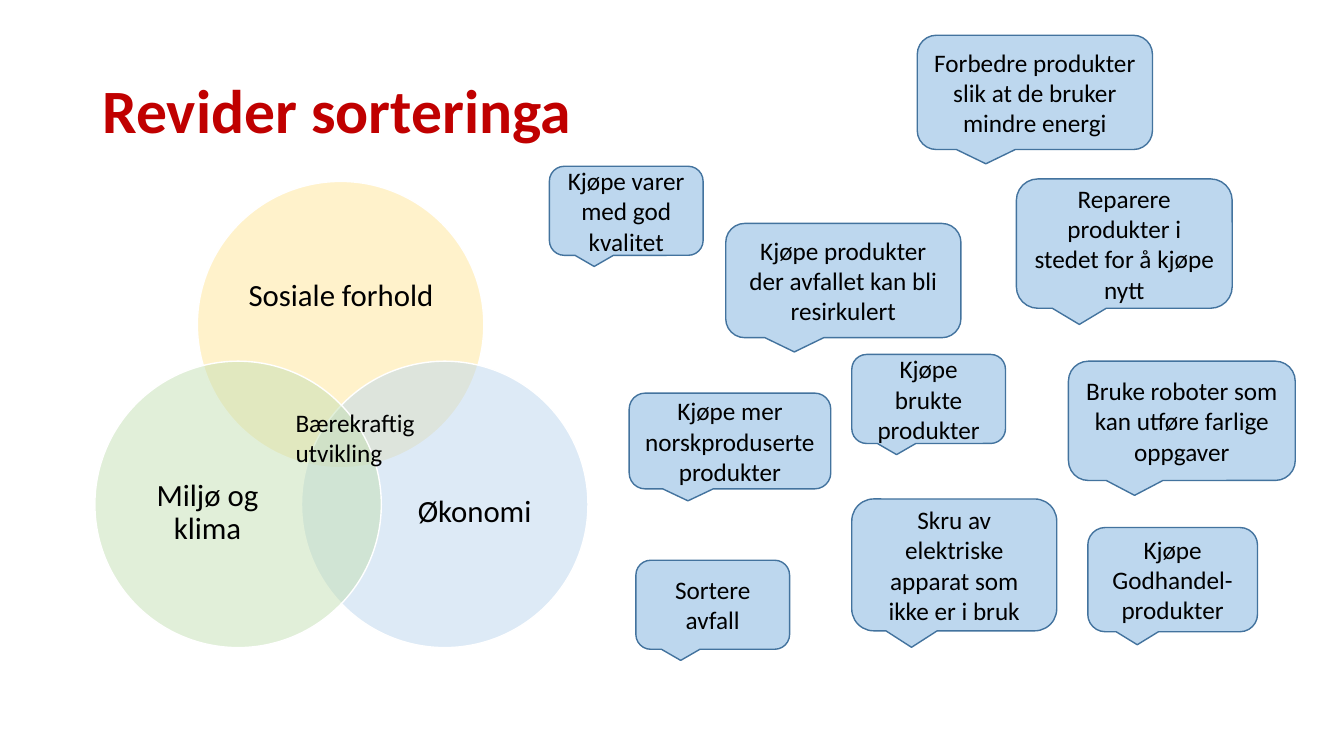
from lxml import etree
from pptx import Presentation
from pptx import util as u
from pptx.dml.color import RGBColor
from pptx.enum import shapes, text
from pptx.oxml.ns import qn

COLORS = {
    "title": "C00000", "ink": "000000", "white": "FFFFFF",
    "social": "FFE699", "economy": "BDD7EE", "climate": "C5E0B4",
    "bubble": "BDD7EE", "bubble_line": "43739E",
}
COLUMNS, ROWS = 160, 90
CIRCLE = 34.1
SMALL = (18.3, 10.6)
WIDE = (28, 13.6)

# circle position, colour, label, label box
VENN = [
    ((23.5, 21.6), "social", "Sosiale forhold", (28.1, 27.6, 25, 15.4)),
    ((35.9, 43), "economy", "Økonomi", (46.3, 51.7, 20.4, 18.7)),
    ((11.3, 43), "climate", "Miljø og klima", (14.5, 51.7, 20.4, 18.7)),
]
MEASURES = [
    ("Kjøpe varer med god kvalitet", (65.4, 19.8), SMALL),
    ("Kjøpe produkter der avfallet kan bli resirkulert", (86.4, 26.6), WIDE),
    ("Forbedre produkter slik at de bruker mindre energi", (109.2, 4.2), WIDE),
    ("Reparere produkter i stedet for å kjøpe nytt", (121, 21.3), (25.7, 15.4)),
    ("Kjøpe mer norskproduserte produkter", (74.9, 46.8), (24, 11.4)),
    ("Kjøpe brukte produkter", (101.4, 42.2), SMALL),
    ("Bruke roboter som kan utføre farlige oppgaver", (127.2, 43), (27, 14.2)),
    ("Sortere avfall", (75.7, 66.7), SMALL),
    ("Skru av elektriske apparat som ikke er i bruk", (101.4, 59.4), (24.4, 15.7)),
    ("Kjøpe Godhandel-produkter", (129.5, 62.8), (20.2, 12.4)),
]


class Deck:
    font = "Calibri"

    def __init__(self):
        self.prs = Presentation()
        self.prs.slide_width, self.prs.slide_height = u.Inches(13.33), u.Inches(7.5)
        self.s = self.prs.slides.add_slide(self.prs.slide_layouts[5])

    def box(self, x, y, w, h):
        """Turn grid columns and rows into slide lengths."""
        col, row = self.prs.slide_width / COLUMNS, self.prs.slide_height / ROWS
        return [round(n) for n in (x * col, y * row, w * col, h * row)]

    def color(self, name):
        return RGBColor.from_string(COLORS[name])

    def set_text(self, sp, words, size, align=text.PP_ALIGN.CENTER, color="ink",
                 bold=False, spacing=None, anchor=text.MSO_ANCHOR.MIDDLE):
        tf = sp.text_frame
        tf.word_wrap = True
        tf.auto_size = text.MSO_AUTO_SIZE.NONE
        tf.vertical_anchor = anchor
        p = tf.paragraphs[0]
        p.alignment, p.line_spacing = align, spacing
        r = p.add_run()
        r.text = words
        r.font.name, r.font.size, r.font.bold = self.font, u.Pt(size), bold
        r.font.color.rgb = self.color(color)

    def title(self, words, box):
        sp = self.s.shapes.title
        sp.left, sp.top, sp.width, sp.height = self.box(*box)
        self.set_text(sp, words, 44, text.PP_ALIGN.LEFT, "title", True, 0.9)

    def shape(self, kind, box, fill, line):
        sp = self.s.shapes.add_shape(kind, *self.box(*box))
        sp.shadow.inherit = False
        sp.fill.solid()
        sp.fill.fore_color.rgb = self.color(fill)
        sp.line.color.rgb = self.color(line)
        sp.line.width = u.Pt(1)
        return sp

    def circle(self, x, y, fill):
        """Add a half-transparent circle."""
        sp = self.shape(shapes.MSO_SHAPE.OVAL, (x, y, CIRCLE, CIRCLE), fill, "white")
        rgb = sp.element.spPr.find(qn("a:solidFill")).find(qn("a:srgbClr"))
        etree.SubElement(rgb, qn("a:alpha"), val="50000")

    def label(self, words, box):
        """Add a centred text box without margins."""
        sp = self.s.shapes.add_textbox(*self.box(*box))
        tf = sp.text_frame
        tf.margin_left = tf.margin_right = tf.margin_top = tf.margin_bottom = 0
        self.set_text(sp, words, 22, spacing=0.9)

    def note(self, words, box):
        sp = self.s.shapes.add_textbox(*self.box(*box))
        self.set_text(sp, words, 18, text.PP_ALIGN.LEFT, anchor=text.MSO_ANCHOR.TOP)

    def bubble(self, words, box):
        kind = shapes.MSO_SHAPE.ROUNDED_RECTANGULAR_CALLOUT
        self.set_text(self.shape(kind, box, "bubble", "bubble_line"), words, 18)


def main():
    deck = Deck()
    deck.title("Revider sorteringa", (11, 4.8, 138, 17.4))
    for position, fill, words, label_box in VENN:
        deck.circle(*position, fill)
        deck.label(words, label_box)
    deck.note("Bærekraftig utvikling", (34, 47.9, 17.8, 8.5))
    for words, position, size in MEASURES:
        deck.bubble(words, position + size)
    deck.prs.save("out.pptx")


if __name__ == "__main__":
    main()
